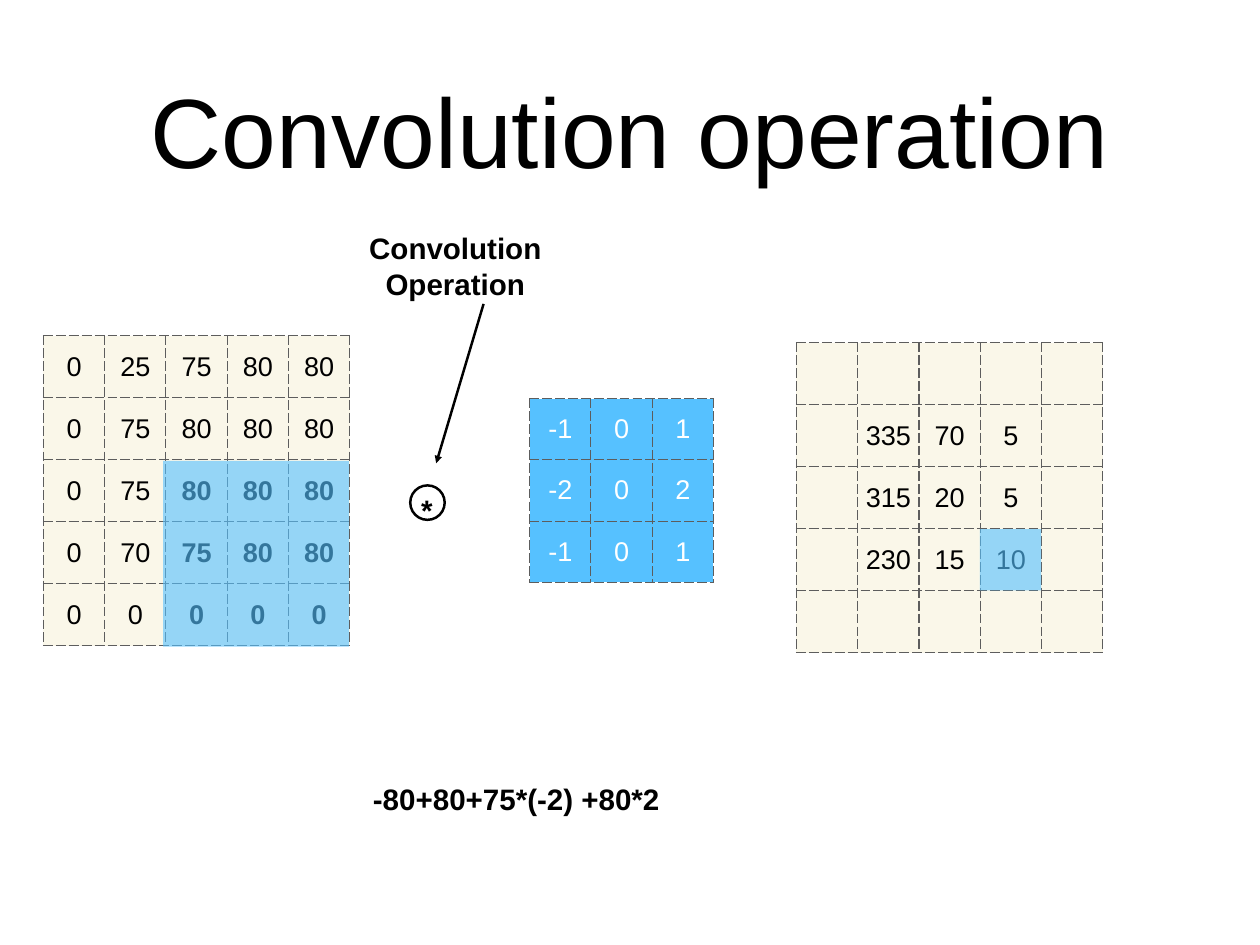
from lxml import etree
from pptx import Presentation
from pptx import util as u
from pptx.dml.color import RGBColor
from pptx.enum import shapes, text
from pptx.oxml import ns

BLACK = RGBColor(0x00, 0x00, 0x00)
WHITE = RGBColor(0xFF, 0xFF, 0xFF)
CREAM = RGBColor(0xFA, 0xF7, 0xE9)
SKY = RGBColor(0x56, 0xC1, 0xFF)
GREY = RGBColor(0x5D, 0x5D, 0x5D)

IMAGE = [
    [0, 25, 75, 80, 80],
    [0, 75, 80, 80, 80],
    [0, 75, 80, 80, 80],
    [0, 70, 75, 80, 80],
    [0, 0, 0, 0, 0],
]
KERNEL = [[-1, 0, 1], [-2, 0, 2], [-1, 0, 1]]
RESULT = [
    ["", "", "", "", ""],
    ["", 335, 70, 5, ""],
    ["", 315, 20, 5, ""],
    ["", 230, 15, 10, ""],
    ["", "", "", "", ""],
]
COLUMN = 49.8
ROW = 50.4
INSET = 4
MARGINS = ("margin_left", "margin_top", "margin_right", "margin_bottom")


def apply(target, values):
    for name, value in values.items():
        setattr(target, name, value)


def points(*lengths):
    return [u.Pt(length) for length in lengths]


def add_child(parent, tag, **attributes):
    return etree.SubElement(parent, ns.qn(tag), attributes)


class Page:
    """The current slide and the type style its elements share."""

    def __init__(self, deck, font="Arial"):
        self.slide = deck.slides.add_slide(deck.slide_layouts[5])
        self.font = font

    def add_words(self, frame, words, size, color=BLACK, bold=False):
        """Put one centred paragraph into a text frame."""
        para = frame.paragraphs[0]
        para.alignment = text.PP_ALIGN.CENTER
        span = para.add_run()
        span.text = str(words)
        apply(span.font, {"name": self.font, "size": u.Pt(size), "bold": bold})
        span.font.color.rgb = color

    def set_frame(self, frame, **values):
        apply(frame, dict.fromkeys(MARGINS, u.Pt(INSET)))
        apply(frame, {"vertical_anchor": text.MSO_ANCHOR.MIDDLE, **values})

    def title(self, words, left, top, width, height):
        box = self.slide.shapes.title
        place = points(left, top, width, height)
        apply(box, dict(zip(("left", "top", "width", "height"), place)))
        self.set_frame(box.text_frame, word_wrap=True)
        self.add_words(box.text_frame, words, 80)

    def label(self, words, left, top, width, height, wrap=False):
        box = self.slide.shapes.add_textbox(*points(left, top, width, height))
        self.set_frame(box.text_frame, word_wrap=wrap,
                       auto_size=text.MSO_AUTO_SIZE.SHAPE_TO_FIT_TEXT)
        self.add_words(box.text_frame, words, 24, bold=True)

    def border(self, cell):
        """Give a cell dashed lines on all four sides."""
        properties = cell._tc.get_or_add_tcPr()
        for side in ("a:lnL", "a:lnR", "a:lnT", "a:lnB"):
            line = add_child(properties, side, w=str(u.Pt(1)))
            add_child(add_child(line, "a:solidFill"), "a:srgbClr", val=str(GREY))
            add_child(line, "a:prstDash", val="dash")

    def matrix(self, values, left, top, row_height, fill, color, bold_cells=()):
        rows, columns = len(values), len(values[0])
        size = points(left, top, columns * COLUMN, rows * row_height)
        table = self.slide.shapes.add_table(rows, columns, *size).table
        apply(table, {"first_row": False, "horz_banding": False})
        for column in table.columns:
            column.width = u.Pt(COLUMN)
        for r, row in enumerate(values):
            table.rows[r].height = u.Pt(row_height)
            for c, value in enumerate(row):
                cell = table.cell(r, c)
                apply(cell, dict.fromkeys(MARGINS, u.Pt(INSET)))
                cell.vertical_anchor = text.MSO_ANCHOR.MIDDLE
                self.border(cell)
                cell.fill.solid()
                cell.fill.fore_color.rgb = fill
                if value != "":
                    self.add_words(cell.text_frame, value, 22, color, (r, c) in bold_cells)

    def highlight(self, left, top, side):
        """Lay a translucent square over table cells."""
        square = self.slide.shapes.add_shape(
            shapes.MSO_SHAPE.RECTANGLE, *points(left, top, side, side))
        square.shadow.inherit = False
        square.fill.solid()
        square.fill.fore_color.rgb = SKY
        square.line.fill.background()
        tint = square._element.spPr.find(".//" + ns.qn("a:srgbClr"))
        add_child(tint, "a:alpha", val="61000")

    def ring(self, left, top, side):
        circle = self.slide.shapes.add_shape(
            shapes.MSO_SHAPE.OVAL, *points(left, top, side, side))
        circle.shadow.inherit = False
        circle.fill.background()
        circle.line.color.rgb = BLACK
        circle.line.width = u.Pt(2)

    def arrow(self, *ends):
        link = self.slide.shapes.add_connector(
            shapes.MSO_CONNECTOR.STRAIGHT, *points(*ends))
        link.line.color.rgb = BLACK
        link.line.width = u.Pt(2)
        properties = link._element.spPr
        add_child(properties.find(ns.qn("a:ln")), "a:tailEnd", type="triangle")
        add_child(properties, "a:effectLst")


def main():
    deck = Presentation()
    deck.slide_width, deck.slide_height = points(1024, 768)
    page = Page(deck)
    page.title("Convolution operation", 75, 20, 874, 170)

    window = [(r, c) for r in range(2, 5) for c in range(2, 5)]
    page.matrix(IMAGE, 35.3, 272.9, ROW, CREAM, BLACK, window)
    page.highlight(132.5, 374.5, 151)
    page.matrix(KERNEL, 430.5, 324, COLUMN, SKY, WHITE)
    page.matrix(RESULT, 647.3, 278.6, ROW, CREAM, BLACK)
    page.highlight(796.3, 430, COLUMN)

    page.label("*", 337.5, 396, 19, 36)
    page.ring(333.4, 394.5, 28)
    page.label("Convolution Operation", 294, 183, 152, 66, wrap=True)
    page.arrow(393, 247, 354.5, 376.5)
    page.label("-80+80+75*(-2) +80*2", 298.5, 631.5, 242, 36)
    deck.save("out.pptx")


if __name__ == "__main__":
    main()
